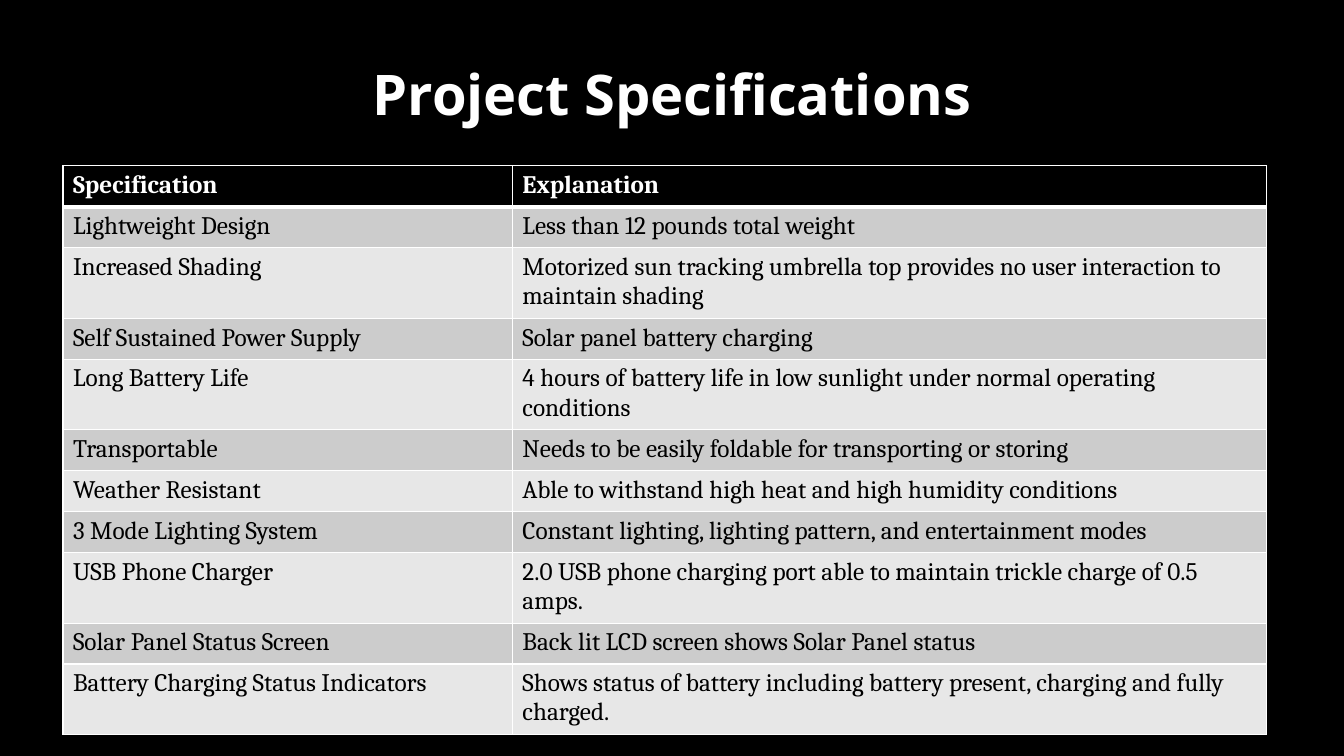
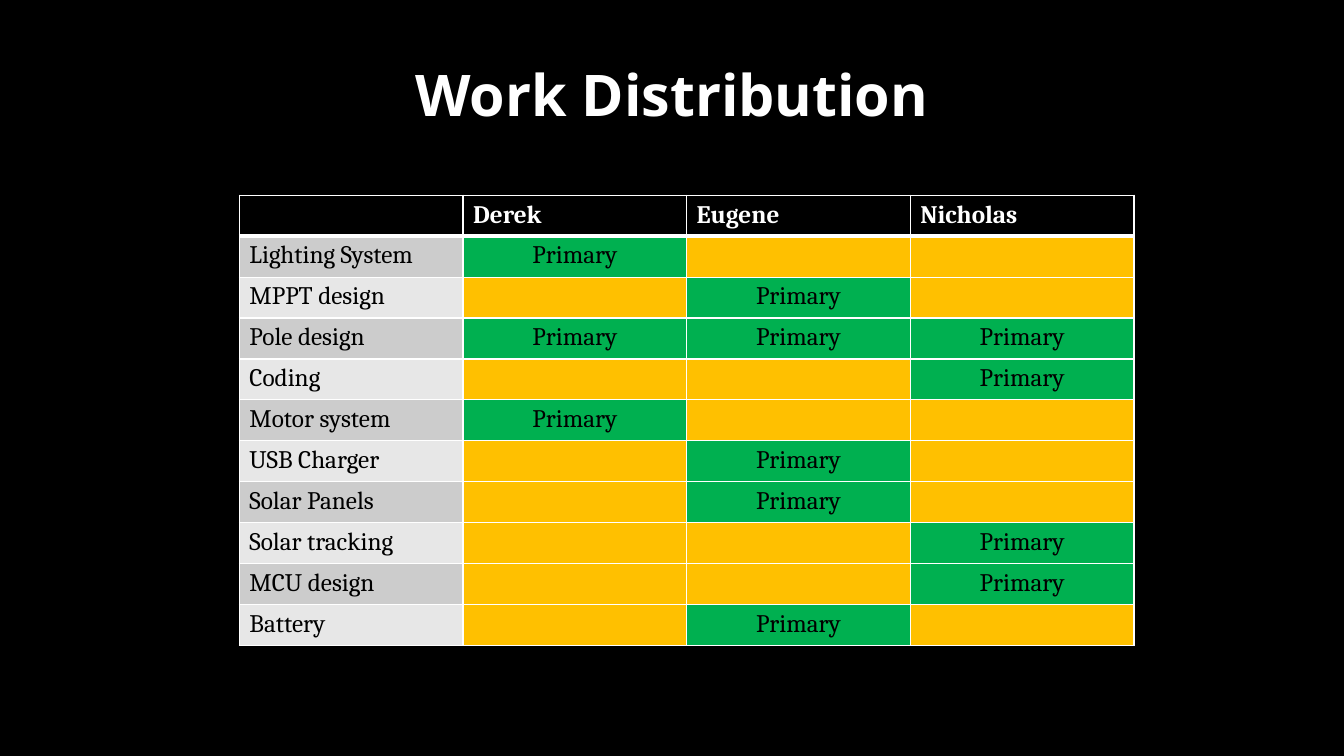
"""Build two black slides, each with a centred title and a ruled table."""
from dataclasses import dataclass
from typing import Any

from lxml.etree import SubElement
from pptx import Presentation
from pptx.dml.color import RGBColor
from pptx.enum.text import MSO_ANCHOR, PP_ALIGN
from pptx.oxml.ns import qn
from pptx.util import Pt

SCALE = 9525
BLACK, WHITE = "000000", "FFFFFF"
BANDS = ("CCCCCC", "E7E7E7")
GREEN, GOLD = "00B050", "FFC000"
ROW = 39
HEAD = {"name": "Cambria", "size": Pt(18), "bold": True}
BODY = HEAD | {"bold": False}
TITLE = {"name": "Noto Sans", "bold": True}
FRAME = {"word_wrap": True, "vertical_anchor": MSO_ANCHOR.MIDDLE}
PLAIN = {"first_row": False, "horz_banding": False}
MARK = "Primary"


@dataclass
class Grid:
    title: str
    size: int
    left: int
    top: int
    cols: list[int]
    rows: list[list[str]]


def px(count: int) -> int:
    return count * SCALE


def hue(code: str) -> RGBColor:
    return RGBColor.from_string(code)


def apply(item: Any, values: dict[str, Any]) -> None:
    for name, value in values.items():
        setattr(item, name, value)


def paint(fill: Any, code: str) -> None:
    fill.solid()
    fill.fore_color.rgb = hue(code)


def write(frame: Any, text: str, style: dict[str, Any], code: str, align: PP_ALIGN) -> None:
    para = frame.paragraphs[0]
    para.alignment = align
    run = para.add_run()
    run.text = text
    apply(run.font, style)
    run.font.color.rgb = hue(code)


def edge(cell: Any, row: int) -> None:
    widths = {"L": 1, "R": 1, "T": 3 if row == 1 else 1, "B": 3 if row == 0 else 1}
    props = cell._tc.get_or_add_tcPr()
    for side, width in widths.items():
        line = SubElement(props, qn(f"a:ln{side}"), w=str(Pt(width)))
        solid = SubElement(line, qn("a:solidFill"))
        SubElement(solid, qn("a:srgbClr"), val=WHITE)


def shade(text: str, row: int, col: int) -> str:
    if row == 0:
        return BLACK
    if text == MARK:
        return GREEN
    if col and not text:
        return GOLD
    return BANDS[(row - 1) % 2]


def fill_cell(cell: Any, text: str, row: int, col: int) -> None:
    edge(cell, row)
    paint(cell.fill, shade(text, row, col))
    if text:
        style, code = (BODY, BLACK) if row else (HEAD, WHITE)
        align = PP_ALIGN.CENTER if text == MARK else PP_ALIGN.LEFT
        write(cell.text_frame, text, style, code, align)


def draw(deck: Any, grid: Grid) -> None:
    slide = deck.slides.add_slide(deck.slide_layouts[6])
    frame = slide.shapes.add_textbox(px(64), px(29), px(1152), px(120)).text_frame
    apply(frame, FRAME)
    write(frame, grid.title, TITLE | {"size": Pt(grid.size)}, WHITE, PP_ALIGN.CENTER)

    count = len(grid.rows)
    table = slide.shapes.add_table(
        count, len(grid.cols), px(grid.left), px(grid.top),
        px(sum(grid.cols)), px(ROW * count)).table
    apply(table, PLAIN)
    for col, width in zip(table.columns, grid.cols):
        col.width = px(width)
    for row, texts in enumerate(grid.rows):
        table.rows[row].height = px(ROW)
        for col, text in enumerate(texts):
            fill_cell(table.cell(row, col), text, row, col)


SPECS = [
    ["Specification", "Explanation"],
    ["Lightweight Design", "Less than 12 pounds total weight"],
    ["Increased Shading", "Motorized sun tracking umbrella top provides no user "
     "interaction to maintain shading"],
    ["Self Sustained Power Supply", "Solar panel battery charging"],
    ["Long Battery Life", "4 hours of battery life in low sunlight under normal "
     "operating conditions"],
    ["Transportable", "Needs to be easily foldable for transporting or storing"],
    ["Weather Resistant", "Able to withstand high heat and high humidity conditions"],
    ["3 Mode Lighting System", "Constant lighting, lighting pattern, and "
     "entertainment modes"],
    ["USB Phone Charger", "2.0 USB phone charging port able to maintain trickle "
     "charge of 0.5 amps."],
    ["Solar Panel Status Screen", "Back lit LCD screen shows Solar Panel status"],
    ["Battery Charging Status Indicators", "Shows status of battery including "
     "battery present, charging and fully charged."],
]
TEAM = ["Derek", "Eugene", "Nicholas"]
TASKS = {
    "Lighting System": ["Derek"],
    "MPPT design": ["Eugene"],
    "Pole design": TEAM,
    "Coding": ["Nicholas"],
    "Motor system": ["Derek"],
    "USB Charger": ["Eugene"],
    "Solar Panels": ["Eugene"],
    "Solar tracking": ["Nicholas"],
    "MCU design": ["Nicholas"],
    "Battery": ["Eugene"],
}
WORK = [["", *TEAM]] + [
    [task, *(MARK if name in leads else "" for name in TEAM)]
    for task, leads in TASKS.items()
]
GRIDS = [
    Grid("Project Specifications", 40, 60, 158, [428, 718], SPECS),
    Grid("Work Distribution", 41, 228, 186, [213] * 4, WORK),
]


def main() -> None:
    deck = Presentation()
    apply(deck, {"slide_width": px(1280), "slide_height": px(720)})
    paint(deck.slide_master.background.fill, BLACK)
    for grid in GRIDS:
        draw(deck, grid)
    deck.save("out.pptx")


if __name__ == "__main__":
    main()
